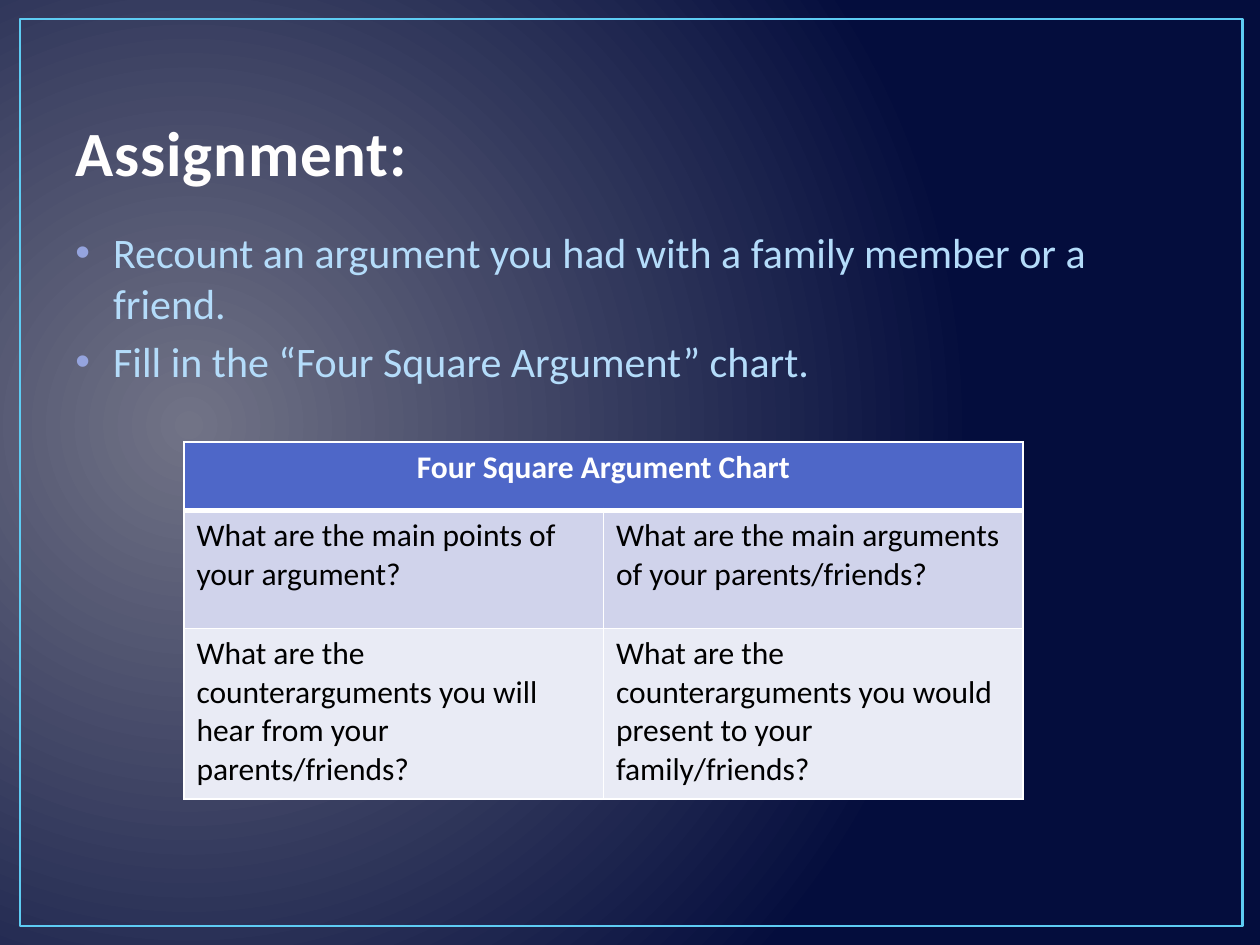
from dataclasses import dataclass

from lxml import etree
from pptx import Presentation, util as u
from pptx.dml.color import RGBColor
from pptx.enum import shapes, text
from pptx.oxml import ns

FONT = "Calibri"
HEX = {
    "glow": "717386", "night": "040D3D", "frame": "5ECCF3",
    "title": "FFFEFE", "edge": "21306A", "body": "B4DCFA",
    "bullet": "95A4DE", "white": "FFFFFF", "black": "000000",
    "head": "4E67C8", "band": "D0D3EB", "pale": "E9EBF5",
}
HEAD = "Four Square Argument Chart"
POINTS = [
    "Recount an argument you had with a family member or a friend.",
    "Fill in the “Four Square Argument” chart.",
]


@dataclass
class Row:
    height: float
    fill: str
    ink: str
    bold: bool
    base: float
    cells: list[str]


ROWS = [
    Row(0.54, "head", "white", True, 3, [HEAD, ""]),
    Row(0.94, "band", "black", False, 1, [
        "What are the main points of your argument?",
        "What are the main arguments of your parents/friends?",
    ]),
    Row(1.35, "pale", "black", False, 1, [
        "What are the counterarguments you will hear from your parents/friends?",
        "What are the counterarguments you would present to your family/friends?",
    ]),
]


def rgb(name: str) -> RGBColor:
    return RGBColor.from_string(HEX[name])


def box(left: float, top: float, width: float, height: float) -> list:
    return [u.Inches(n) for n in (left, top, width, height)]


def sub(node, tag: str, **attrs: str):
    return etree.SubElement(node, ns.qn(tag), attrs)


def style(para, size: float, ink: str, bold: bool = False) -> None:
    for run in para.runs:
        font = run.font
        font.name, font.size, font.bold = FONT, u.Pt(size), bold
        font.color.rgb = rgb(ink)


def line(node, tag: str, color: str, width: float):
    edge = sub(node, tag, w=str(u.Pt(width)))
    sub(sub(edge, "a:solidFill"), "a:srgbClr", val=HEX[color])
    return edge


def paint(slide) -> None:
    fill = slide.background.fill
    fill.gradient()
    for stop, name in zip(fill.gradient_stops, ("glow", "night")):
        stop.color.rgb = rgb(name)
    grad = next(slide.element.iter(ns.qn("a:gradFill")))
    grad.remove(grad.find(ns.qn("a:lin")))
    ring = sub(grad, "a:path", path="circle")
    sub(ring, "a:fillToRect", l="15000", t="50000", r="85000", b="60000")


def frame(slide) -> None:
    rect = slide.shapes.add_shape(
        shapes.MSO_SHAPE.RECTANGLE, *box(0.16, 0.15, 9.7, 7.2))
    rect.shadow.inherit = False
    rect.fill.background()
    rect.line.color.rgb = rgb("frame")
    rect.line.width = u.Pt(1.5)


def title(slide) -> None:
    head = slide.shapes.title
    head.left, head.top, head.width, head.height = box(0.5, 0.3, 9, 1.25)
    area = head.text_frame
    area.text = "Assignment:"
    area.vertical_anchor = text.MSO_ANCHOR.BOTTOM
    para = area.paragraphs[0]
    para.alignment = text.PP_ALIGN.LEFT
    style(para, 36, "title", True)
    props = next(para.runs[0].font.fill and head.element.iter(ns.qn("a:rPr")))
    props.set("spc", "50")
    props.insert(0, line(props, "a:ln", "edge", 1.05))


def bullets(slide) -> None:
    area = slide.shapes.add_textbox(*box(0.5, 1.75, 9, 4.99)).text_frame
    area.word_wrap = True
    area.text = "\n".join(POINTS)
    for para in area.paragraphs:
        style(para, 24, "body")
        para.space_before = u.Pt(4.8)
    for props in area._txBody.iter(ns.qn("a:pPr")):
        props.set("marL", str(u.Inches(0.3)))
        props.set("indent", str(u.Inches(-0.3)))
        sub(sub(props, "a:buClr"), "a:srgbClr", val=HEX["bullet"])
        sub(props, "a:buFont", typeface="Arial")
        sub(props, "a:buChar", char="•")


def border(cell, base: float) -> None:
    props = cell._tc.get_or_add_tcPr()
    sides = [("a:lnL", 1), ("a:lnR", 1), ("a:lnT", 1), ("a:lnB", base)]
    for spot, (tag, width) in enumerate(sides):
        props.insert(spot, line(props, tag, "white", width))


def chart(slide) -> None:
    grid = slide.shapes.add_table(
        len(ROWS), 2, *box(1.46, 3.51, 6.67, 2.83)).table
    for col in grid.columns:
        col.width = u.Inches(3.33)
    for i, row in enumerate(ROWS):
        grid.rows[i].height = u.Inches(row.height)
        for j, words in enumerate(row.cells):
            cell = grid.cell(i, j)
            cell.text = words
            cell.fill.solid()
            cell.fill.fore_color.rgb = rgb(row.fill)
            style(cell.text_frame.paragraphs[0], 18, row.ink, row.bold)
            border(cell, row.base)
    top = grid.cell(0, 0)
    top.merge(grid.cell(0, 1))
    top.text_frame.paragraphs[0].alignment = text.PP_ALIGN.CENTER


def main() -> None:
    deck = Presentation()
    deck.slide_width, deck.slide_height = u.Inches(10), u.Inches(7.5)
    slide = deck.slides.add_slide(deck.slide_layouts[5])
    for draw in (paint, frame, title, bullets, chart):
        draw(slide)
    deck.save("out.pptx")


if __name__ == "__main__":
    main()
